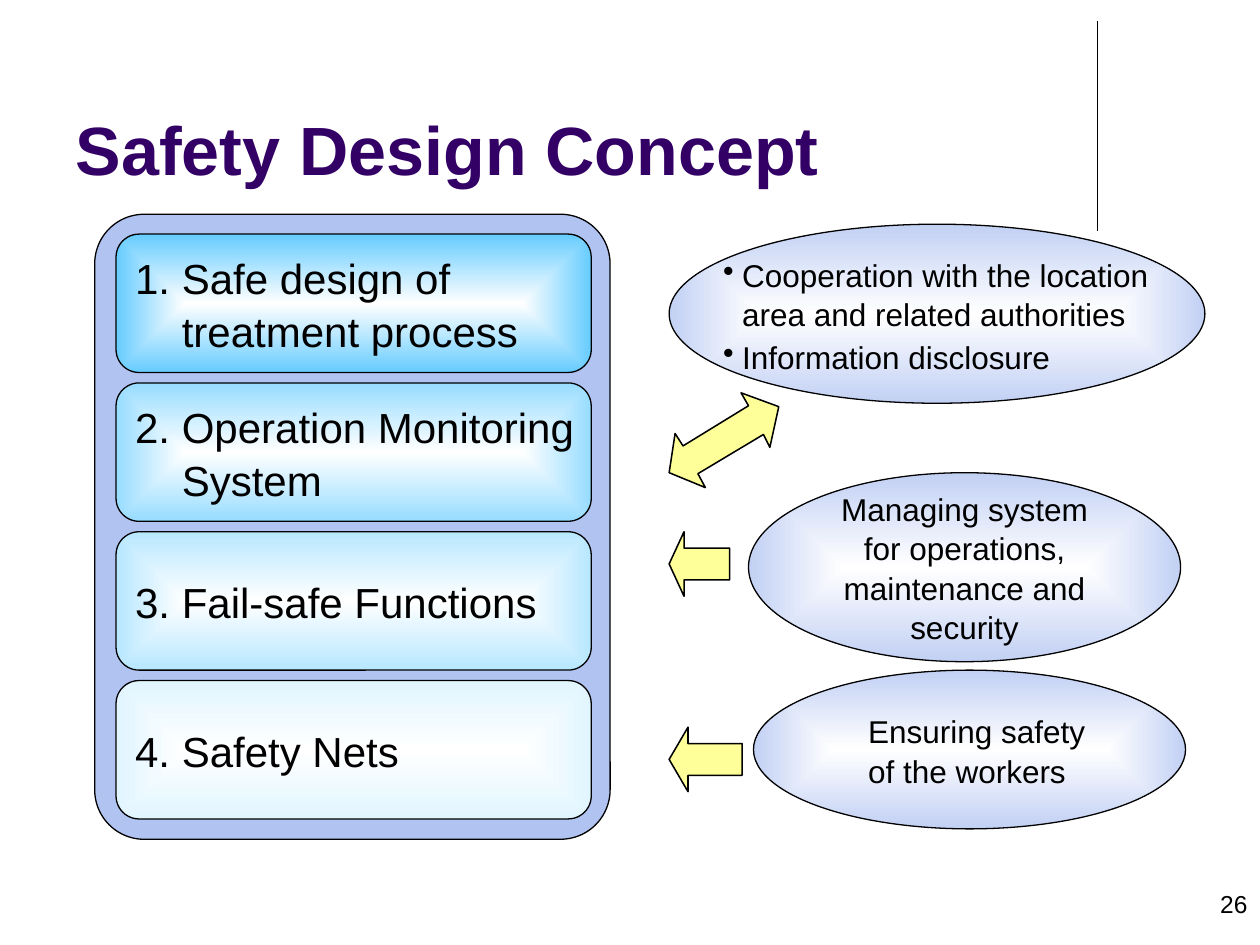
import pptx
import pptx.dml.color
import pptx.enum.shapes
import pptx.enum.text
import pptx.oxml
import pptx.oxml.ns
import pptx.util

Cm = pptx.util.Cm
Pt = pptx.util.Pt
RGBColor = pptx.dml.color.RGBColor
MSO_SHAPE = pptx.enum.shapes.MSO_SHAPE
PP_ALIGN = pptx.enum.text.PP_ALIGN
MSO_ANCHOR = pptx.enum.text.MSO_ANCHOR

BLACK = RGBColor(0x00, 0x00, 0x00)
WHITE = RGBColor(0xFF, 0xFF, 0xFF)
PURPLE = RGBColor(0x33, 0x00, 0x66)
PANEL_BLUE = RGBColor(0xB1, 0xC3, 0xF1)
ELLIPSE_BLUE = RGBColor(0xC2, 0xD0, 0xF4)
ARROW_YELLOW = RGBColor(0xFF, 0xFF, 0x99)
CARD_BLUES = [
    RGBColor(0x66, 0xCC, 0xFF),
    RGBColor(0x97, 0xDC, 0xFF),
    RGBColor(0xB7, 0xE7, 0xFF),
    RGBColor(0xE1, 0xF5, 0xFF),
]
NAMESPACE = pptx.oxml.ns.nsdecls("a")


def write_text(text_frame, text, size=18, color=BLACK, bold=False, align=PP_ALIGN.LEFT,
               anchor=MSO_ANCHOR.TOP, wrap=True, inset=None, hanging=0, bullet=None,
               line_spacing=1.04, space_before=0):
    """Write one paragraph per line of text; a vertical tab breaks a line."""
    text_frame.auto_size = pptx.enum.text.MSO_AUTO_SIZE.NONE
    text_frame.word_wrap = wrap
    text_frame.vertical_anchor = anchor
    if inset is not None:
        text_frame.margin_left = text_frame.margin_right = inset
        text_frame.margin_top = text_frame.margin_bottom = inset
    text_frame.text = text
    for index, paragraph in enumerate(text_frame.paragraphs):
        properties = paragraph._p.get_or_add_pPr()
        if hanging:
            properties.set("marL", str(hanging))
            properties.set("indent", str(-hanging))
        if bullet:
            properties.append(pptx.oxml.parse_xml(f'<a:buChar {NAMESPACE} char="{bullet}"/>'))
        paragraph.alignment = align
        paragraph.line_spacing = line_spacing
        paragraph.space_before = Pt(space_before if index else 0)
        for run in paragraph.runs:
            run.font.name = "Arial"
            run.font.size = Pt(size)
            run.font.bold = bold
            run.font.color.rgb = color


def style_shape(shape, color, line_width=0.75, gradient=False):
    """Outline in black; fill flat, or from a white centre out to the colour."""
    shape.shadow.inherit = False
    shape.line.color.rgb = BLACK
    shape.line.width = Pt(line_width)
    if not gradient:
        shape.fill.solid()
        shape.fill.fore_color.rgb = color
        return
    shape.fill.gradient()
    for stop, position, stop_color in zip(shape.fill.gradient_stops, (0, 1), (WHITE, color)):
        stop.position = position
        stop.color.rgb = stop_color
    gradient_fill = shape._element.spPr.find(pptx.oxml.ns.qn("a:gradFill"))
    gradient_fill.remove(gradient_fill.find(pptx.oxml.ns.qn("a:lin")))
    gradient_fill.append(pptx.oxml.parse_xml(
        f'<a:path {NAMESPACE} path="shape">'
        '<a:fillToRect l="50000" t="50000" r="50000" b="50000"/></a:path>'))


presentation = pptx.Presentation()
presentation.slide_width = Cm(25.4)
presentation.slide_height = Cm(19.05)
slide = presentation.slides.add_slide(presentation.slide_layouts[5])
shapes = slide.shapes

# Vertical rule at the top right
rule = shapes.add_connector(pptx.enum.shapes.MSO_CONNECTOR.STRAIGHT,
                            Cm(22.12), Cm(0.43), Cm(22.12), Cm(4.65))
rule.line.color.rgb = BLACK
rule.line.width = Pt(0.75)
rule._element.spPr.append(pptx.oxml.parse_xml(f"<a:effectLst {NAMESPACE}/>"))

# Title
title = shapes.title
title.left, title.top, title.width, title.height = Cm(1.27), Cm(0.33), Cm(20.96), Cm(3.61)
write_text(title.text_frame, "Safety Design Concept", size=39, color=PURPLE, bold=True,
           anchor=MSO_ANCHOR.BOTTOM, line_spacing=1.0)

# Slide number
number_box = shapes.add_textbox(Cm(19.48), Cm(17.78), Cm(5.92), Cm(1.27))
write_text(number_box.text_frame, "26", size=14, align=PP_ALIGN.RIGHT)

# Panel with the four numbered safety layers
panel = shapes.add_shape(MSO_SHAPE.ROUNDED_RECTANGLE, Cm(1.91), Cm(4.32), Cm(10.39), Cm(12.6))
panel.adjustments[0] = 0.096
style_shape(panel, PANEL_BLUE)

layers = [
    "1. Safe design of\vtreatment process",
    "2. Operation Monitoring\vSystem",
    "3. Fail-safe Functions",
    "4. Safety Nets",
]
for index, (layer, color) in enumerate(zip(layers, CARD_BLUES)):
    card = shapes.add_shape(MSO_SHAPE.ROUNDED_RECTANGLE,
                            Cm(2.34), Cm(4.72 + 3 * index), Cm(9.58), Cm(2.79))
    style_shape(card, color, gradient=True)
    write_text(card.text_frame, layer, size=24, anchor=MSO_ANCHOR.MIDDLE, wrap=False,
               hanging=Cm(0.94))

# Ellipses for the supporting measures
ellipses = []
for left, top, width, height in [
    (13.49, 4.52, 10.8, 3.61),
    (15.09, 9.53, 8.71, 3.81),
    (15.19, 13.51, 8.71, 3.2),
]:
    ellipse = shapes.add_shape(MSO_SHAPE.OVAL, Cm(left), Cm(top), Cm(width), Cm(height))
    style_shape(ellipse, ELLIPSE_BLUE, gradient=True)
    ellipses.append(ellipse)

write_text(ellipses[1].text_frame,
           "Managing system\vfor operations,\vmaintenance and\vsecurity",
           align=PP_ALIGN.CENTER, anchor=MSO_ANCHOR.MIDDLE, wrap=False)

cooperation_box = shapes.add_textbox(Cm(14.58), Cm(5.13), Cm(9.32), Cm(2.36))
write_text(cooperation_box.text_frame,
           "Cooperation with the location\varea and related authorities\nInformation disclosure",
           inset=0, hanging=Cm(0.38), bullet="•", space_before=2)

workers_box = shapes.add_textbox(Cm(17.5), Cm(14.33), Cm(5.11), Cm(1.52))
write_text(workers_box.text_frame, "Ensuring safety\vof the workers", inset=0)

# Arrows: one slanted and double-headed, two pointing left
arrow_outlines = [[
    (13.49, 9.53), (14.22, 9.83), (14.07, 9.55), (15.39, 8.76), (15.52, 9.02),
    (15.7, 8.2), (14.94, 7.92), (15.09, 8.18), (13.77, 8.99), (13.61, 8.74),
]]
for middle, neck, right in [(11.37, 13.79, 14.71), (15.31, 13.87, 14.96)]:
    arrow_outlines.append([
        (13.49, middle), (neck, middle - 0.65), (neck, middle - 0.32), (right, middle - 0.32),
        (right, middle + 0.32), (neck, middle + 0.32), (neck, middle + 0.65),
    ])
for outline in arrow_outlines:
    points = [(Cm(x), Cm(y)) for x, y in outline]
    builder = shapes.build_freeform(*points[0])
    builder.add_line_segments(points[1:], close=True)
    style_shape(builder.convert_to_shape(), ARROW_YELLOW, line_width=0.88)

presentation.save("out.pptx")
